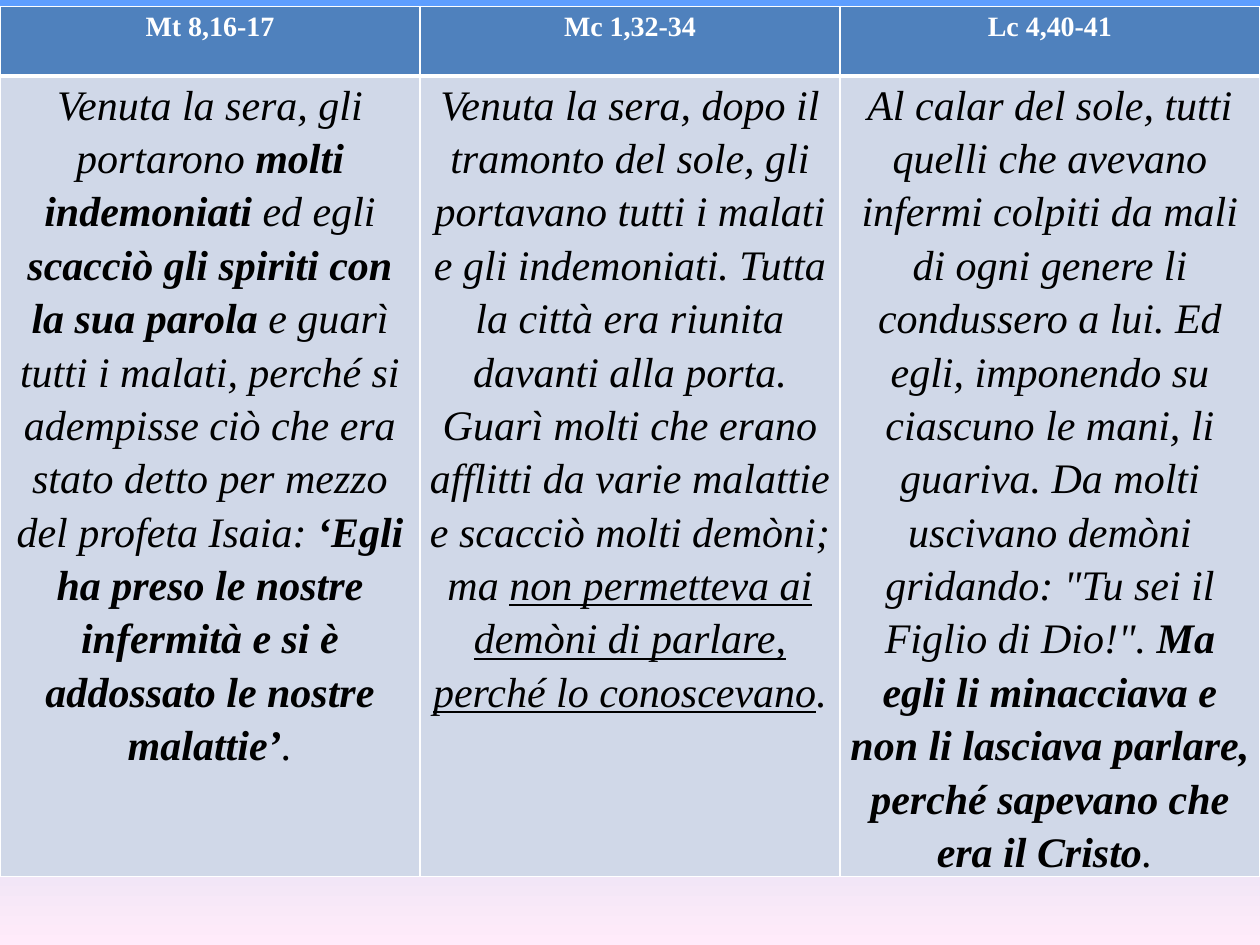
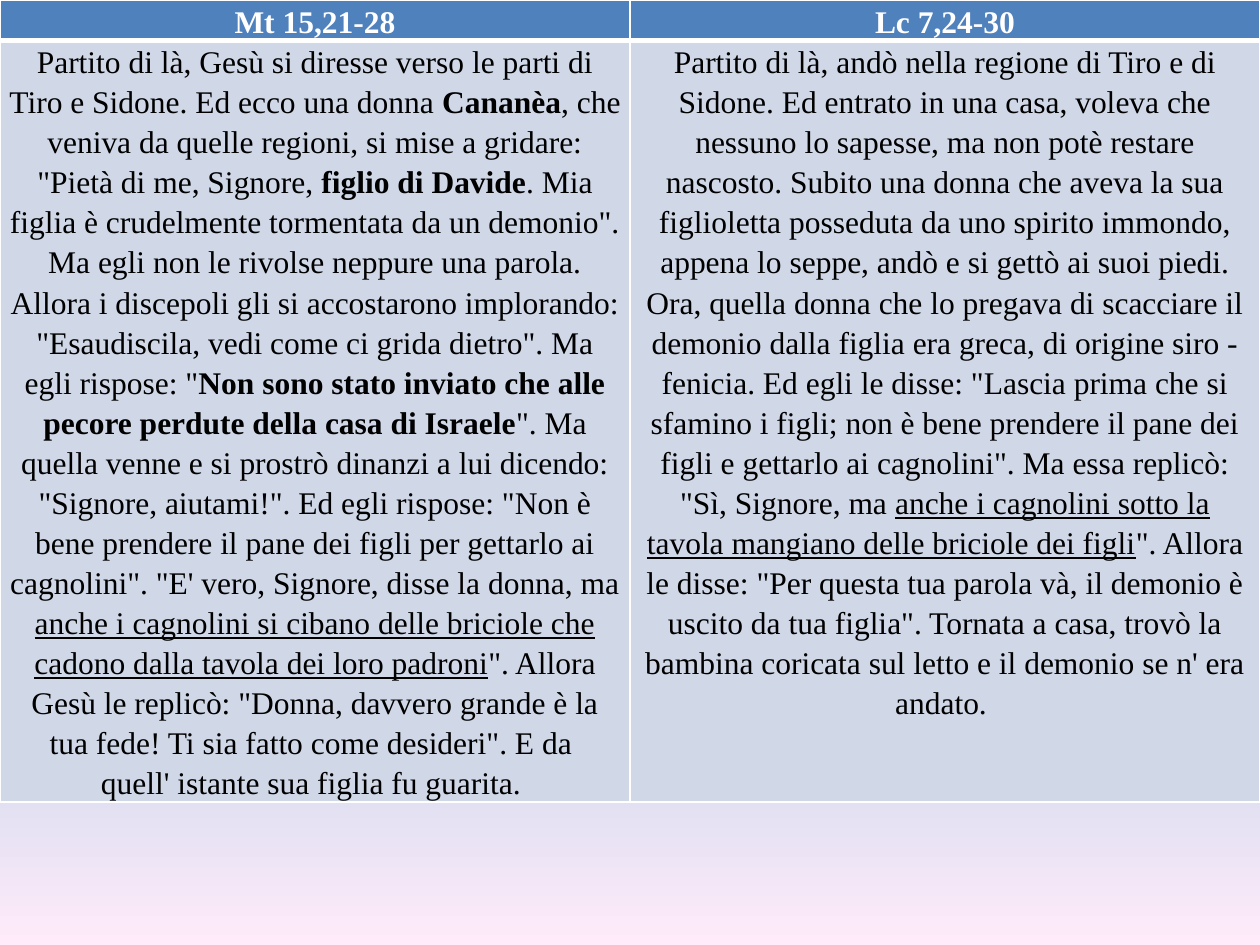
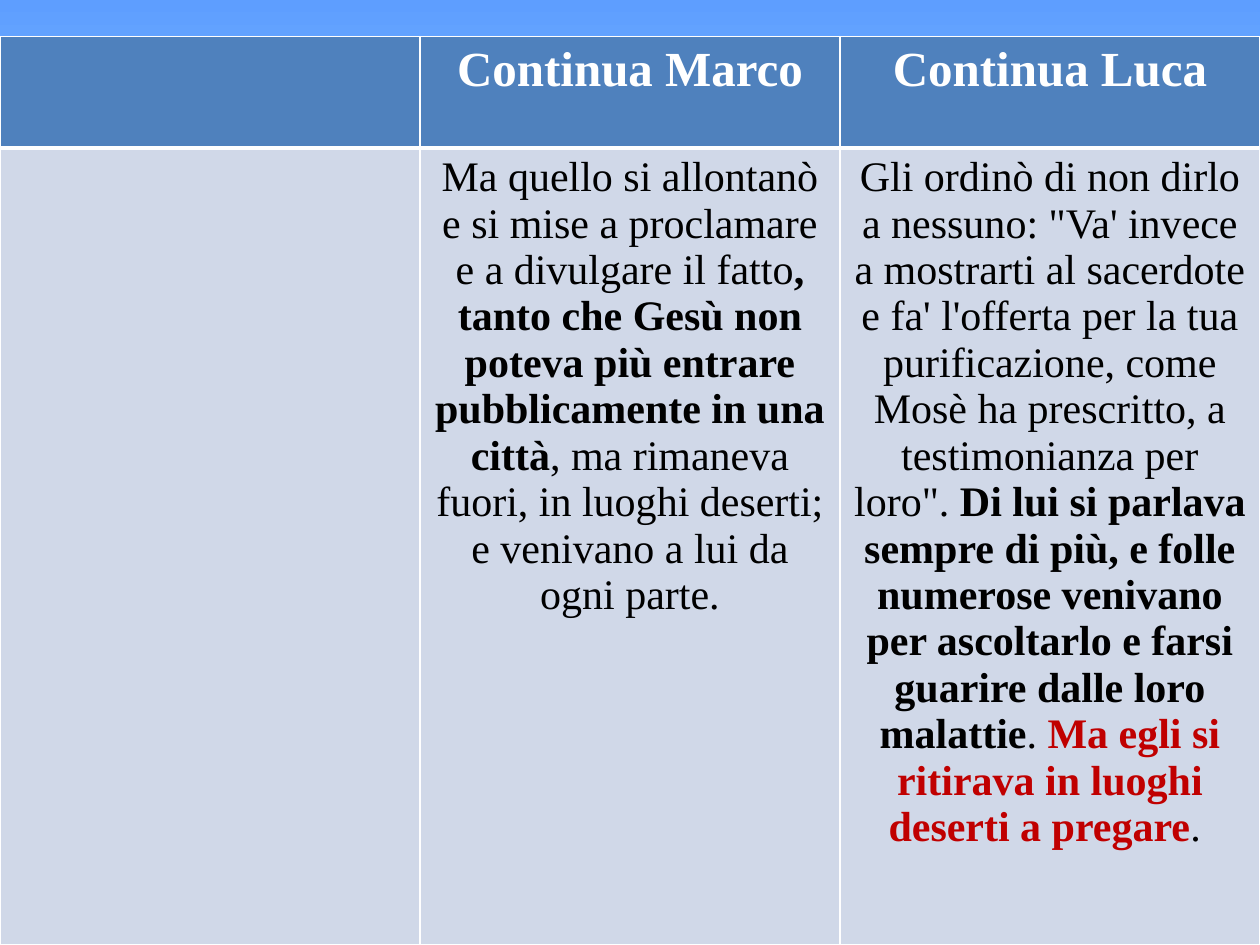
from lxml.etree import SubElement
from pptx import Presentation
from pptx.dml.color import RGBColor
from pptx.enum.text import PP_ALIGN
from pptx.oxml import parse_xml
from pptx.oxml.ns import nsdecls, qn
from pptx.util import Cm, Pt

FONT = "Times New Roman"
WIDTH, HEIGHT = 25.4, 19.05
WHITE, BLACK, RED = "FFFFFF", "000000", "C00000"
HEAD, BODY = "4F81BD", "D0D8E8"
SKY = [(0, "5E9EFF"), (26, "85C2FF"), (70, "C4D6EB"), (100, "FFEBFA")]

# A column is (heading, paragraphs); a paragraph is a list of (text, marks).
# Marks: b bold, u underlined, r red.
EVENING = [
    ("Mt 8,16-17", [[
        ("Venuta la sera, gli portarono ", ""),
        ("molti indemoniati", "b"),
        (" ed egli ", ""),
        ("scacciò gli spiriti con la sua parola ", "b"),
        ("e guarì tutti i malati, perché si adempisse ciò che era stato detto "
         "per mezzo del profeta Isaia: ", ""),
        ("‘Egli ha preso le nostre infermità e si è addossato le nostre "
         "malattie’", "b"),
        (".", ""),
    ]]),
    ("Mc 1,32-34", [[
        ("Venuta la sera, dopo il tramonto del sole, gli portavano tutti i "
         "malati e gli indemoniati. Tutta la città era riunita davanti alla "
         "porta. Guarì molti che erano afflitti da varie malattie e scacciò "
         "molti demòni; ma ", ""),
        ("non permetteva ai demòni di parlare, perché lo conoscevano", "u"),
        (".", ""),
    ]]),
    ("Lc 4,40-41", [[
        ("Al calar del sole, tutti quelli che avevano infermi colpiti da mali "
         "di ogni genere li condussero a lui. Ed egli, imponendo su ciascuno "
         "le mani, li guariva. Da molti uscivano demòni gridando: \"Tu sei il "
         "Figlio di Dio!\". ", ""),
        ("Ma egli li minacciava e non li lasciava parlare, perché sapevano "
         "che era il Cristo", "b"),
        (". ", ""),
    ]]),
]

WOMAN = [
    ("Mt 15,21-28", [[
        ("Partito di là, Gesù si diresse verso le parti di Tiro e Sidone. Ed "
         "ecco una donna ", ""),
        ("Cananèa", "b"),
        (", che veniva da quelle regioni, si mise a gridare: \"Pietà di me, "
         "Signore, ", ""),
        ("figlio di Davide", "b"),
        (". Mia figlia è crudelmente tormentata da un demonio\". Ma egli non "
         "le rivolse neppure una parola. Allora i discepoli gli si accostarono "
         "implorando: \"Esaudiscila, vedi come ci grida dietro\". Ma egli "
         "rispose: \"", ""),
        ("Non sono stato inviato che alle pecore perdute della casa di "
         "Israele", "b"),
        ("\". Ma quella venne e si prostrò dinanzi a lui dicendo: \"Signore, "
         "aiutami!\". Ed egli rispose: \"Non è bene prendere il pane dei figli "
         "per gettarlo ai cagnolini\". \"E' vero, Signore, disse la donna, "
         "ma ", ""),
        ("anche i cagnolini si cibano delle briciole che cadono dalla tavola "
         "dei loro padroni", "u"),
        ("\". Allora Gesù le replicò: \"Donna, davvero grande è la tua fede! "
         "Ti sia fatto come desideri\". E da ", ""),
    ], [
        ("quell' istante sua figlia fu guarita. ", ""),
    ]]),
    ("Lc 7,24-30", [[
        ("Partito di là, andò nella regione di Tiro e di Sidone. Ed entrato in "
         "una casa, voleva che nessuno lo sapesse, ma non potè restare "
         "nascosto. Subito una donna che aveva la sua figlioletta posseduta da "
         "uno spirito immondo, appena lo seppe, andò e si gettò ai suoi piedi. "
         "Ora, quella donna che lo pregava di scacciare il demonio dalla "
         "figlia era greca, di origine siro - fenicia. Ed egli le disse: "
         "\"Lascia prima che si sfamino i figli; non è bene prendere il pane "
         "dei figli e gettarlo ai cagnolini\". Ma essa replicò: \"Sì, Signore, "
         "ma ", ""),
        ("anche i cagnolini sotto la tavola mangiano delle briciole dei "
         "figli", "u"),
        ("\". Allora le disse: \"Per questa tua parola và, il demonio è uscito "
         "da tua figlia\". Tornata a casa, trovò la bambina coricata sul letto "
         "e il demonio se n' era andato. ", ""),
    ]]),
]

LEPER = [
    ("", []),
    ("Continua Marco", [[
        ("Ma quello si allontanò e si mise a proclamare e a divulgare il "
         "fatto", ""),
        (", tanto che Gesù non poteva più entrare pubblicamente in una "
         "città", "b"),
        (", ma rimaneva fuori, in luoghi deserti; e venivano a lui da ogni "
         "parte.", ""),
    ]]),
    ("Continua Luca", [[
        ("Gli ordinò di non dirlo a nessuno: \"Va' invece a mostrarti al "
         "sacerdote e fa' l'offerta per la tua purificazione, come Mosè ha "
         "prescritto, a testimonianza per loro\". ", ""),
        ("Di lui si parlava sempre di più, e folle numerose venivano per "
         "ascoltarlo e farsi guarire dalle loro malattie", "b"),
        (". ", ""),
        ("Ma egli si ritirava in luoghi deserti a pregare", "br"),
        (". ", ""),
    ]]),
]

TIGHT = dict(pad=(0.18, 0), lead=1.15)
LOOSE = dict(pad=(0.25, 0.13), lead=1)
SLIDES = [
    dict(cols=EVENING, top=0.13, rows=(1.4, 16.13), sizes=(16, 24),
         slant=True, **TIGHT),
    dict(cols=WOMAN, top=0, rows=(0.81, 15.3), sizes=(18, 18),
         slant=False, **TIGHT),
    dict(cols=LEPER, top=0.74, rows=(2.24, 16.07), sizes=(28, 24),
         slant=False, **LOOSE),
]


def rgb(code):
    return RGBColor.from_string(code)


def paint_sky(slide):
    stops = "".join(f'<a:gs pos="{pos * 1000}"><a:srgbClr val="{code}"/></a:gs>'
                    for pos, code in SKY)
    grad = parse_xml(f'<a:gradFill {nsdecls("a")} rotWithShape="1">'
                     f'<a:gsLst>{stops}</a:gsLst>'
                     '<a:lin ang="5400000" scaled="0"/></a:gradFill>')
    fill = slide.background.fill
    fill.solid()
    old = slide.element.find(".//" + qn("p:bgPr")).find(qn("a:solidFill"))
    old.getparent().replace(old, grad)


def edge(cell, lines):
    """Draw white borders; lines maps a side (L, R, T, B) to points."""
    props = cell._tc.get_or_add_tcPr()
    for side, width in lines.items():
        line = SubElement(props, qn("a:ln" + side), w=str(Pt(width)))
        fill = SubElement(line, qn("a:solidFill"))
        SubElement(fill, qn("a:srgbClr"), val=WHITE)


def write(cell, paras, size, color, slant, lead):
    frame = cell.text_frame
    for i, runs in enumerate(paras):
        para = frame.add_paragraph() if i else frame.paragraphs[0]
        para.alignment = PP_ALIGN.CENTER
        para.line_spacing = lead
        for text, marks in runs:
            run = para.add_run()
            run.text = text
            font = run.font
            font.name, font.size = FONT, Pt(size)
            font.bold, font.italic = "b" in marks, slant
            font.underline = "u" in marks
            font.color.rgb = rgb(RED if "r" in marks else color)


def add_verses(slide, cols, top, rows, sizes, slant, pad, lead):
    table = slide.shapes.add_table(2, len(cols), 0, Cm(top), Cm(WIDTH),
                                   Cm(sum(rows))).table
    for row, height in zip(table.rows, rows):
        row.height = Cm(height)
    for c, (title, paras) in enumerate(cols):
        table.columns[c].width = Cm(WIDTH / len(cols))
        head, body = table.cell(0, c), table.cell(1, c)
        edge(head, dict(L=1, R=1, T=1, B=3))
        edge(body, dict(L=1, R=1, B=1))
        for cell, code in ((head, HEAD), (body, BODY)):
            cell.fill.solid()
            cell.fill.fore_color.rgb = rgb(code)
            cell.margin_left = cell.margin_right = Cm(pad[0])
            cell.margin_top = cell.margin_bottom = Cm(pad[1])
        if title:
            write(head, [[(title, "b")]], sizes[0], WHITE, False, lead)
        write(body, paras, sizes[1], BLACK, slant, lead)


def main():
    deck = Presentation()
    deck.slide_width, deck.slide_height = Cm(WIDTH), Cm(HEIGHT)
    for spec in SLIDES:
        slide = deck.slides.add_slide(deck.slide_layouts[6])
        paint_sky(slide)
        add_verses(slide, **spec)
    deck.save("out.pptx")


if __name__ == "__main__":
    main()
